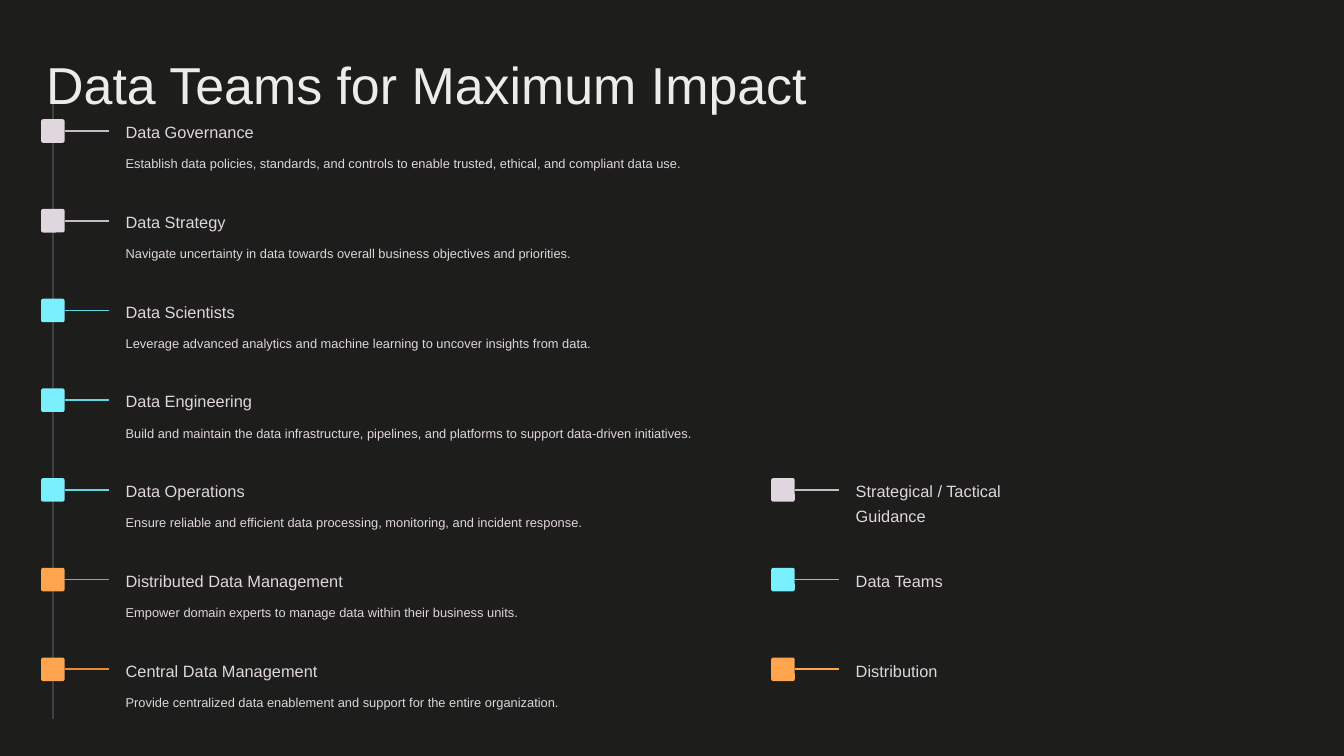
"""Build the data teams slide: a colour-coded timeline with its legend."""
import pptx
import pptx.dml.color
import pptx.enum.shapes
import pptx.enum.text
import pptx.oxml.ns
import pptx.util
from lxml import etree

Pt = pptx.util.Pt
RGBColor = pptx.dml.color.RGBColor

BACKGROUND = RGBColor(0x1D, 0x1D, 0x1B)
TITLE = RGBColor(0xED, 0xED, 0xE8)
SPINE = RGBColor(0x3F, 0x3F, 0x44)
LILAC = RGBColor(0xE0, 0xD6, 0xDE)
LILAC_DARK = RGBColor(0xC6, 0xBC, 0xC4)
CYAN = RGBColor(0x7A, 0xF0, 0xFF)
CYAN_DARK = RGBColor(0x60, 0xD6, 0xE5)
ORANGE = RGBColor(0xFF, 0xA4, 0x4F)
ORANGE_DARK = RGBColor(0xE5, 0x8A, 0x35)

GUIDANCE = (LILAC, LILAC_DARK)
TEAMS = (CYAN, CYAN_DARK)
DISTRIBUTION = (ORANGE, ORANGE_DARK)

FIRST_ROW, ROW_PITCH = 102.2, 76.9
TIMELINE_LEFT, LEGEND_LEFT = 35.2, 661
LEGEND_FIRST_ROW = 4
MARKER = 20.2
STALK_END = 58.4
LABEL_OFFSET = 72.5
LABEL_WIDTH = 142.6

ROLES = [
    ("Data Governance", LABEL_WIDTH, GUIDANCE,
     "Establish data policies, standards, and controls to enable trusted, ethical, and compliant data use."),
    ("Data Strategy", LABEL_WIDTH, GUIDANCE,
     "Navigate uncertainty in data towards overall business objectives and priorities."),
    ("Data Scientists", LABEL_WIDTH, TEAMS,
     "Leverage advanced analytics and machine learning to uncover insights from data."),
    ("Data Engineering", LABEL_WIDTH, TEAMS,
     "Build and maintain the data infrastructure, pipelines, and platforms to support data-driven initiatives."),
    ("Data Operations", LABEL_WIDTH, TEAMS,
     "Ensure reliable and efficient data processing, monitoring, and incident response."),
    ("Distributed Data Management", 219, DISTRIBUTION,
     "Empower domain experts to manage data within their business units."),
    ("Central Data Management", 188.6, DISTRIBUTION,
     "Provide centralized data enablement and support for the entire organization."),
]
LEGEND = [
    ("Strategical / Tactical Guidance", GUIDANCE),
    ("Data Teams", TEAMS),
    ("Distribution", (ORANGE, ORANGE)),
]


class SlideBuilder:
    """Hold the text style and the current slide."""

    font_name = "Arial"

    def __init__(self, slide):
        self.slide = slide
        fill = slide.background.fill
        fill.solid()
        fill.fore_color.rgb = BACKGROUND

    def set_text(self, shape, text, size, color, spacing):
        """Put one styled paragraph into a shape without insets."""
        frame = shape.text_frame
        frame.text = text
        frame.word_wrap = True
        frame.auto_size = pptx.enum.text.MSO_AUTO_SIZE.NONE
        frame.vertical_anchor = pptx.enum.text.MSO_ANCHOR.TOP
        frame.margin_left = frame.margin_right = 0
        frame.margin_top = frame.margin_bottom = 0
        paragraph = frame.paragraphs[0]
        paragraph.alignment = pptx.enum.text.PP_ALIGN.LEFT
        paragraph.line_spacing = spacing
        paragraph.font.name = self.font_name
        paragraph.font.size = Pt(size)
        paragraph.font.color.rgb = color

    def title(self, text, left, top, width, height):
        """Place and format the title placeholder."""
        heading = self.slide.shapes.title
        heading.left, heading.top = Pt(left), Pt(top)
        heading.width, heading.height = Pt(width), Pt(height)
        self.set_text(heading, text, 44.5, TITLE, 1.27)

    def text(self, text, left, top, width, size, spacing):
        """Add a text box 18 points high."""
        box = self.slide.shapes.add_textbox(Pt(left), Pt(top), Pt(width), Pt(18))
        self.set_text(box, text, size, LILAC, spacing)

    def line(self, x1, y1, x2, y2, color):
        """Add a thin straight line."""
        line = self.slide.shapes.add_connector(
            pptx.enum.shapes.MSO_CONNECTOR.STRAIGHT, Pt(x1), Pt(y1), Pt(x2), Pt(y2))
        line.line.color.rgb = color
        line.line.width = Pt(1.4)
        etree.SubElement(line._element.spPr, pptx.oxml.ns.qn("a:effectLst"))
        return line

    def marker(self, left, top, colors):
        """Add a rounded square with a stalk to its right."""
        square_color, stalk_color = colors
        square = self.slide.shapes.add_shape(
            pptx.enum.shapes.MSO_SHAPE.ROUNDED_RECTANGLE,
            Pt(left), Pt(top), Pt(MARKER), Pt(MARKER))
        square.adjustments[0] = 0.09
        square.shadow.inherit = False
        square.fill.solid()
        square.fill.fore_color.rgb = square_color
        square.line.fill.background()
        middle = top + MARKER / 2
        stalk = self.line(left + MARKER, middle, left + STALK_END, middle, stalk_color)
        stalk.begin_connect(square, 3)

    def entry(self, row, left, label, label_width, colors):
        """Add a marker and its label on a row of the timeline grid."""
        top = FIRST_ROW + row * ROW_PITCH
        self.marker(left, top, colors)
        self.text(label, left + LABEL_OFFSET, top - 1.4, label_width, 14, 1.25)

    def description(self, row, text):
        """Add the explanation below a role's label."""
        top = FIRST_ROW + row * ROW_PITCH + 23.1
        self.text(text, TIMELINE_LEFT + LABEL_OFFSET, top, 1004.4, 11, 1.64)


def main():
    presentation = pptx.Presentation()
    presentation.slide_width, presentation.slide_height = Pt(1152), Pt(648)
    builder = SlideBuilder(presentation.slides.add_slide(presentation.slide_layouts[5]))

    builder.title("Data Teams for Maximum Impact", 39.6, 31, 1004.4, 35.3)
    spine_x = TIMELINE_LEFT + MARKER / 2
    builder.line(spine_x, 89.3, spine_x, 616.3, SPINE)
    for row, (role, width, colors, duty) in enumerate(ROLES):
        builder.entry(row, TIMELINE_LEFT, role, width, colors)
        builder.description(row, duty)
    for row, (group, colors) in enumerate(LEGEND, LEGEND_FIRST_ROW):
        builder.entry(row, LEGEND_LEFT, group, LABEL_WIDTH, colors)

    presentation.save("out.pptx")


if __name__ == "__main__":
    main()
